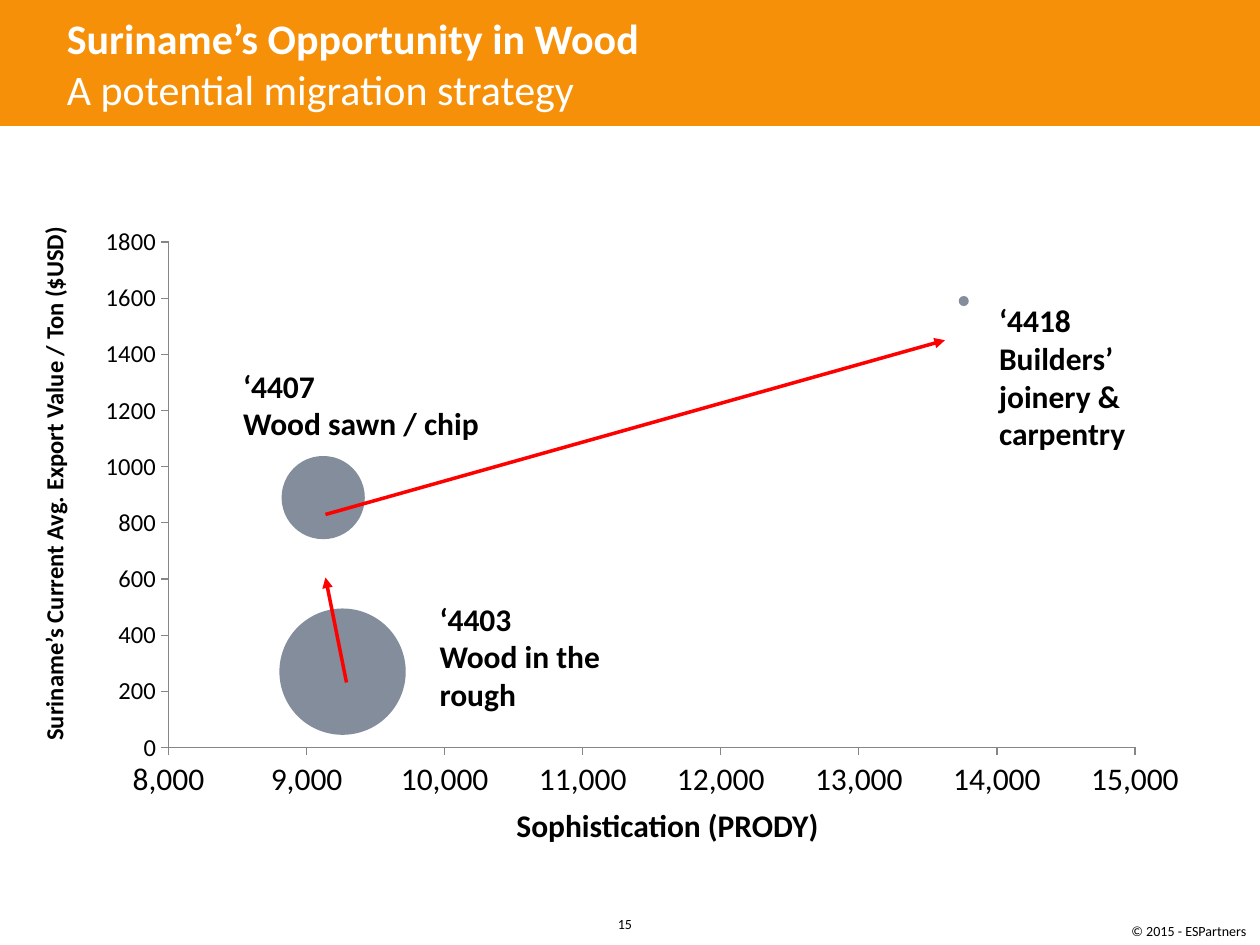
from lxml.etree import SubElement
from pptx import Presentation
from pptx.chart.data import BubbleChartData
from pptx.dml.color import RGBColor
from pptx.enum.chart import XL_CHART_TYPE, XL_TICK_MARK
from pptx.enum.shapes import MSO_CONNECTOR, MSO_SHAPE
from pptx.enum.text import MSO_ANCHOR, PP_ALIGN
from pptx.oxml import parse_xml
from pptx.oxml.ns import nsdecls, qn
from pptx.util import Pt

BLACK, WHITE, ORANGE, RED = "000000", "FFFFFF", "F69008", "FF0000"
BUBBLE_GRAY, AXIS_GRAY = "838D9B", "868686"


def color(hex_string):
    return RGBColor.from_string(hex_string)


def set_attributes(target, values):
    for name, value in values.items():
        setattr(target, name, value)


class SlideBuilder:
    """Holds the text style and the slide being filled."""

    font_name = "Calibri"

    def __init__(self, slide):
        self.slide = slide

    def style_font(self, font, size, bold=False, text_color=BLACK):
        set_attributes(font, {"name": self.font_name, "size": Pt(size), "bold": bold})
        font.color.rgb = color(text_color)

    def fill_text(self, frame, lines, size, bolds, text_color=BLACK, align=PP_ALIGN.LEFT):
        for index, (line, bold) in enumerate(zip(lines, bolds)):
            paragraph = frame.add_paragraph() if index else frame.paragraphs[0]
            paragraph.text = line
            paragraph.alignment = align
            self.style_font(paragraph.font, size, bold, text_color)

    def banner_title(self, lines, height):
        banner = self.slide.shapes.add_shape(MSO_SHAPE.RECTANGLE, 0, 0, Pt(720), Pt(height))
        banner.shadow.inherit = False
        banner.fill.solid()
        banner.fill.fore_color.rgb = color(ORANGE)
        banner.line.fill.background()
        title = self.slide.shapes.title
        set_attributes(title, {"left": Pt(31), "top": Pt(0), "width": Pt(570), "height": Pt(height)})
        title.text_frame.vertical_anchor = MSO_ANCHOR.MIDDLE
        self.fill_text(title.text_frame, lines, 24, (True, False), WHITE)
        banner._element.addnext(title._element)

    def text(self, box, lines, size, bold=True, align=PP_ALIGN.LEFT, wrap=True, rotation=0):
        shape = self.slide.shapes.add_textbox(*map(Pt, box))
        shape.rotation = rotation
        shape.text_frame.word_wrap = wrap
        self.fill_text(shape.text_frame, lines, size, [bold] * len(lines), align=align)

    def bubble_chart(self, box, points, plot_layout):
        data = BubbleChartData()
        series = data.add_series("Series 1")
        for point in points:
            series.add_data_point(*point)
        chart = self.slide.shapes.add_chart(XL_CHART_TYPE.BUBBLE, *map(Pt, box), data).chart
        set_attributes(chart, {"has_legend": False, "has_title": False})
        self.style_font(chart.font, 18)
        plot = chart.plots[0]
        plot.bubble_scale = 100
        bubble_format = plot.series[0].format
        bubble_format.fill.solid()
        bubble_format.fill.fore_color.rgb = color(BUBBLE_GRAY)
        bubble_format.line.fill.background()
        self.style_axis(chart.category_axis, 8000, 15000, 1000, 18, "#,##0")
        self.style_axis(chart.value_axis, 0, 1800, 200, 14, "0")
        self.place_plot(chart, plot_layout)

    def style_axis(self, axis, minimum, maximum, step, size, number_format):
        set_attributes(axis, {
            "minimum_scale": minimum, "maximum_scale": maximum, "major_unit": step,
            "has_major_gridlines": False, "has_minor_gridlines": False, "has_title": False,
            "major_tick_mark": XL_TICK_MARK.OUTSIDE, "minor_tick_mark": XL_TICK_MARK.NONE,
        })
        set_attributes(axis.tick_labels,
                       {"number_format": number_format, "number_format_is_linked": False})
        self.style_font(axis.tick_labels.font, size)
        axis.format.line.color.rgb = color(AXIS_GRAY)
        axis.format.line.width = Pt(0.75)

    def place_plot(self, chart, plot_layout):
        """Fix the inner plot area as fractions of the chart: x, y, w, h."""
        plot_area = chart._chartSpace.chart.plotArea
        for layout in plot_area.findall(qn("c:layout")):
            plot_area.remove(layout)
        values = "".join(f'<c:{key} val="{value}"/>' for key, value in plot_layout.items())
        plot_area.insert(0, parse_xml(
            f'<c:layout {nsdecls("c")}><c:manualLayout><c:layoutTarget val="inner"/>'
            f'<c:xMode val="edge"/><c:yMode val="edge"/>{values}</c:manualLayout></c:layout>'))

    def arrow(self, start, end):
        connector = self.slide.shapes.add_connector(
            MSO_CONNECTOR.STRAIGHT, *map(Pt, start + end))
        connector.line.color.rgb = color(RED)
        connector.line.width = Pt(2)
        SubElement(connector.line._get_or_add_ln(), qn("a:tailEnd"), type="triangle")
        SubElement(connector._element.spPr, qn("a:effectLst"))


def main():
    presentation = Presentation()
    set_attributes(presentation, {"slide_width": Pt(720), "slide_height": Pt(540)})
    builder = SlideBuilder(presentation.slides.add_slide(presentation.slide_layouts[5]))

    builder.text((639.4, 523.4, 82, 17.3), ["© 2015 - ESPartners"], 8, bold=False, wrap=False)
    builder.banner_title(["Suriname’s Opportunity in Wood", "A potential migration strategy"], 72)
    builder.text((342, 519.8, 30.2, 14.4), ["15"], 8, bold=False, align=PP_ALIGN.CENTER)

    bubbles = [(9260, 270, 38000), (9120, 890, 16500), (13760, 1590, 240)]
    builder.bubble_chart((48.2, 123.1, 642.2, 339.8), bubbles,
                         {"x": 0.075, "y": 0.045, "w": 0.86, "h": 0.85})

    product_labels = [
        ((563.8, 168.5, 116.6, 94.3), ["‘4418", "Builders’ joinery & carpentry"]),
        ((131.8, 205.9, 156.2, 51.1), ["‘4407", "Wood sawn / chip"]),
        ((244.1, 339.1, 120.2, 72.7), ["‘4403", "Wood in the rough"]),
    ]
    for box, lines in product_labels:
        builder.text(box, lines, 18)

    builder.text((-125.3, 264.2, 312.5, 24.5),
                 ["Suriname’s Current Avg. Export Value / Ton ($USD)"], 14,
                 align=PP_ALIGN.CENTER, rotation=270)
    builder.text((288, 457.2, 188.6, 28.8), ["Sophistication (PRODY)"], 18, wrap=False)

    builder.arrow((198, 390), (186, 330))
    builder.arrow((186, 294), (540, 194.4))

    presentation.save("out.pptx")


if __name__ == "__main__":
    main()
